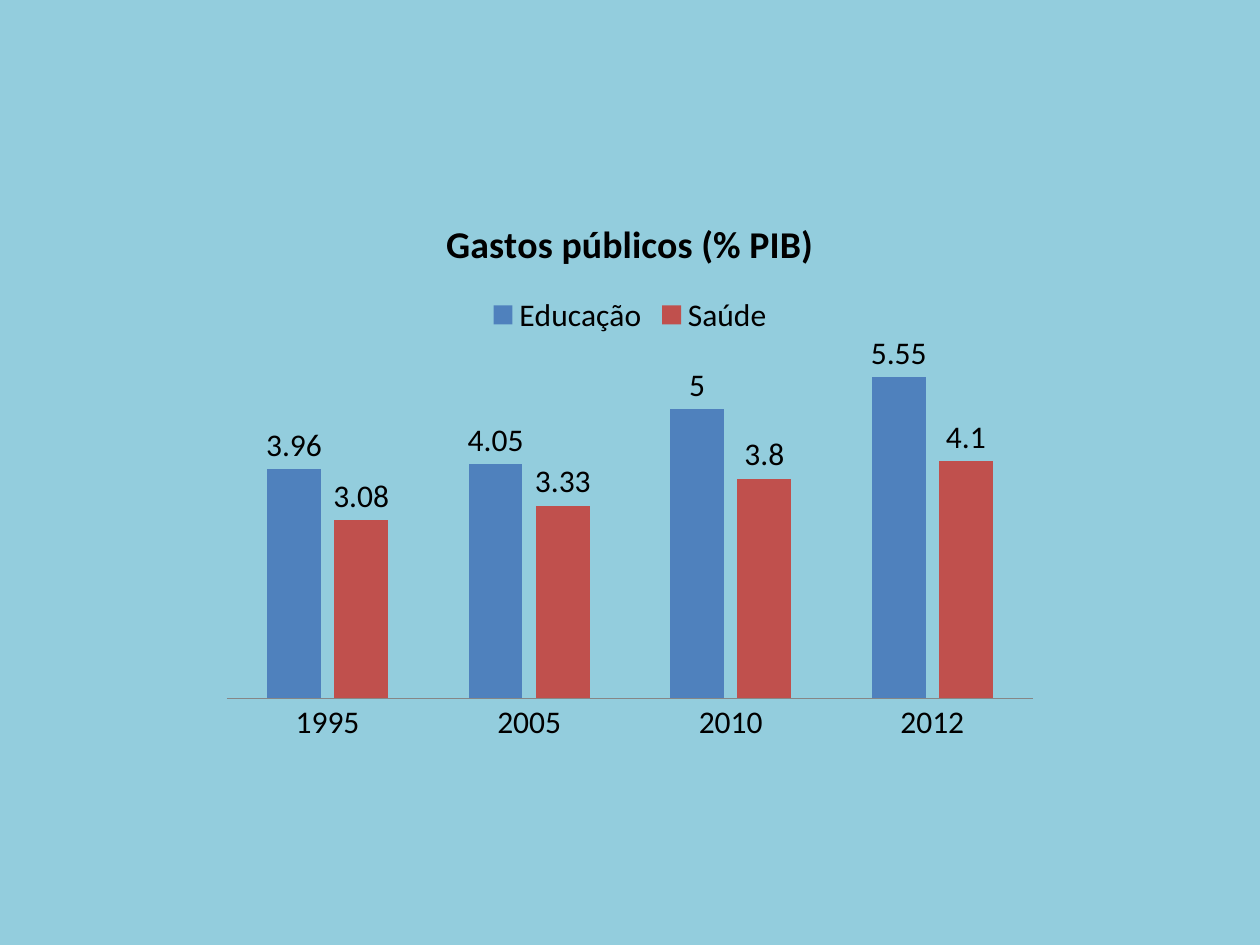
import dataclasses

import pptx
import pptx.chart.data
import pptx.dml.color
import pptx.enum.chart
import pptx.util
from pptx.util import Cm


@dataclasses.dataclass(frozen=True)
class Theme:
    font: str = "Calibri"
    background: str = "93CDDD"
    text: str = "000000"
    axis: str = "868686"
    series: tuple = ("4F81BD", "C0504D")
    title_size: float = 21.6
    body_size: float = 18


THEME = Theme()
YEARS = ("1995", "2005", "2010", "2012")
SPENDING = {
    "Educação": (3.96, 4.05, 5, 5.55),
    "Saúde": (3.08, 3.33, 3.8, 4.1),
}


def rgb(value):
    return pptx.dml.color.RGBColor.from_string(value)


def format_font(font, size=THEME.body_size, color=THEME.text, bold=False):
    font.name = THEME.font
    font.size = pptx.util.Pt(size)
    font.bold = bold
    font.color.rgb = rgb(color)


def write_text(frame, text, **style):
    span = frame.paragraphs[0].add_run()
    span.text = text
    format_font(span.font, **style)


def style_axes(chart):
    years = chart.category_axis
    years.major_tick_mark = pptx.enum.chart.XL_TICK_MARK.NONE
    years.format.line.color.rgb = rgb(THEME.axis)
    years.format.line.width = pptx.util.Pt(0.75)
    values = chart.value_axis
    values.visible = False
    values.has_major_gridlines = False
    values.minimum_scale = 0
    values.maximum_scale = 6


def style_columns(plot):
    plot.vary_by_categories = False
    plot.gap_width = 150
    plot.overlap = -25
    for series, color in zip(plot.series, THEME.series):
        series.format.fill.solid()
        series.format.fill.fore_color.rgb = rgb(color)
        labels = series.data_labels
        labels.show_value = True
        labels.position = pptx.enum.chart.XL_LABEL_POSITION.OUTSIDE_END
        format_font(labels.font)


def add_spending_chart(page, left, top, width, height):
    data = pptx.chart.data.CategoryChartData()
    data.categories = YEARS
    for name, values in SPENDING.items():
        data.add_series(name, values)
    kind = pptx.enum.chart.XL_CHART_TYPE.COLUMN_CLUSTERED
    chart = page.shapes.add_chart(kind, left, top, width, height, data).chart
    format_font(chart.font)
    chart.has_title = True
    write_text(chart.chart_title.text_frame, "Gastos públicos (% PIB)",
               size=THEME.title_size, bold=True)
    chart.chart_title.include_in_layout = False
    chart.has_legend = True
    chart.legend.position = pptx.enum.chart.XL_LEGEND_POSITION.TOP
    chart.legend.include_in_layout = False
    style_axes(chart)
    style_columns(chart.plots[0])


def main():
    deck = pptx.Presentation()
    deck.slide_width, deck.slide_height = Cm(25.4), Cm(19.05)
    page = deck.slides.add_slide(deck.slide_layouts[6])
    page.background.fill.solid()
    page.background.fill.fore_color.rgb = rgb(THEME.background)
    width, height = Cm(16.93), Cm(11.29)
    left = (deck.slide_width - width) // 2
    add_spending_chart(page, left, Cm(3.88), width, height)
    deck.save("out.pptx")


if __name__ == "__main__":
    main()
